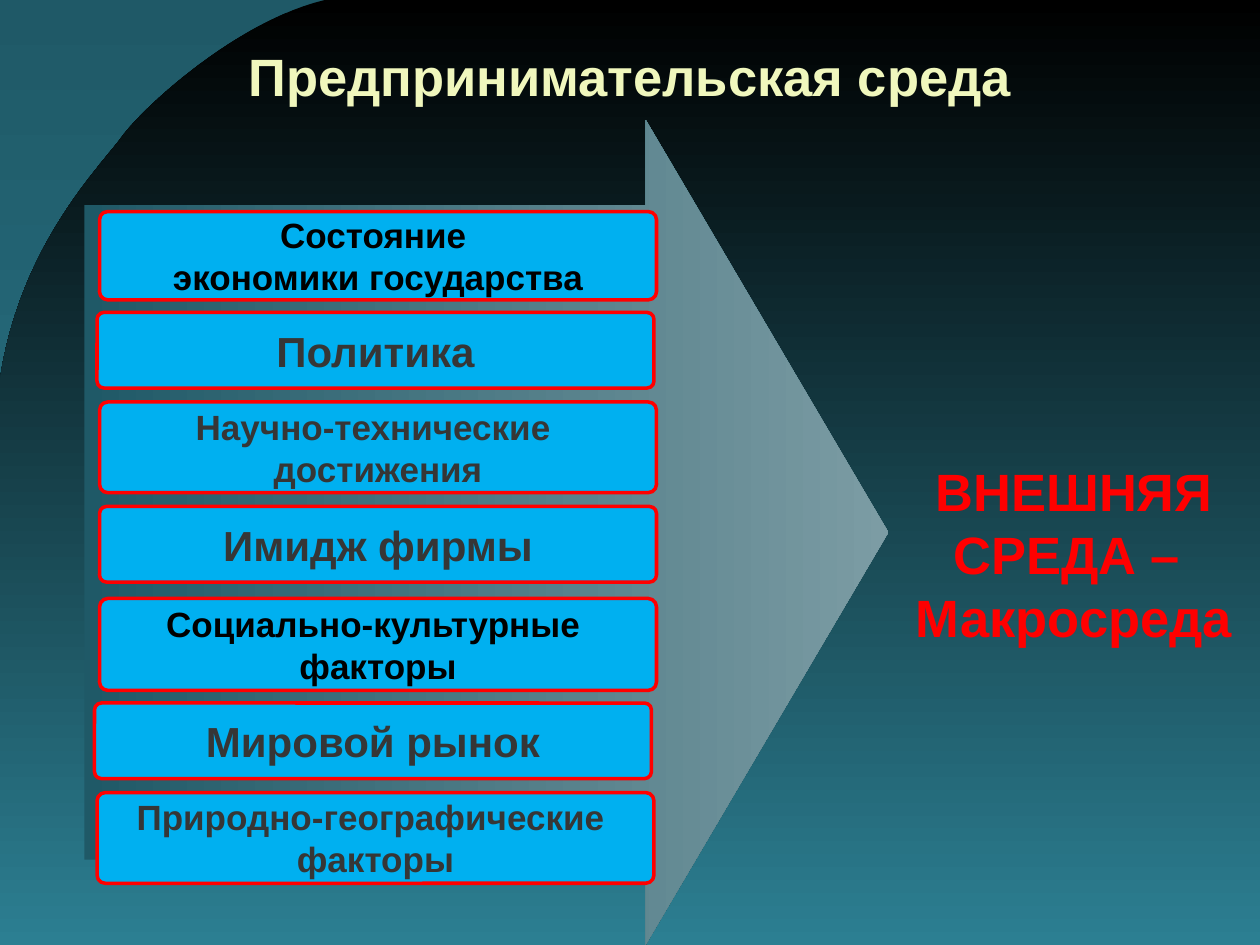
from lxml.etree import SubElement, fromstring
from pptx import Presentation
from pptx.dml.color import RGBColor
from pptx.enum.shapes import MSO_SHAPE as Kind
from pptx.enum.text import MSO_ANCHOR as Anchor, PP_ALIGN as Align
from pptx.oxml.ns import nsdecls, qn
from pptx.util import Inches, Pt

BLACK = RGBColor(0x00, 0x00, 0x00)
GRAY = RGBColor(0x36, 0x36, 0x36)
RED = RGBColor(0xFF, 0x00, 0x00)
BLUE = RGBColor(0x00, 0xB0, 0xF0)
CREAM = RGBColor(0xF0, 0xF7, 0xBD)
DEEP = RGBColor(0x1F, 0x59, 0x67)
TEAL = RGBColor(0x2C, 0x7F, 0x92)
MIST = RGBColor(0x7C, 0x9C, 0xA4)

FACTORS = [
    (0.79, 1.68, 0.70, 20, BLACK, ["Состояние ", "экономики государства"]),
    (0.77, 2.48, 0.60, 24, GRAY, ["Политика"]),
    (0.79, 3.19, 0.72, 20, GRAY, ["Научно-технические ", "достижения"]),
    (0.79, 4.02, 0.60, 24, GRAY, ["Имидж фирмы"]),
    (0.79, 4.75, 0.73, 20, BLACK, ["Социально-культурные ", "факторы"]),
    (0.75, 5.58, 0.60, 24, GRAY, ["Мировой рынок"]),
    (0.77, 6.29, 0.72, 20, GRAY, ["Природно-географические ", "факторы"]),
]
CURVES = [
    [(2.58, 0), (1.9, 0.16), (1.16, 0.83), (0.98, 1.07)],
    [(0.98, 1.07), (0.8, 1.32), (0.16, 1.94), (0, 3.01)],
]


def bend(a, b, c, d, steps=24):
    for i in range(1, steps + 1):
        t = i / steps
        u = 1 - t
        yield tuple(u**3 * p + 3 * u * u * t * q + 3 * u * t * t * r + t**3 * s
                    for p, q, r, s in zip(a, b, c, d))


class Deck:
    font = "Arial"

    def __init__(self, slide):
        self.slide = slide
        self.shapes = slide.shapes

    def blend(self, fill, first, last, angle):
        fill.gradient()
        fill.gradient_angle = angle
        for stop, color in zip(fill.gradient_stops, (first, last)):
            stop.color.rgb = color

    def sweep(self, curves):
        points = [p for curve in curves for p in bend(*curve)]
        points += [(0, 7.5), (10, 7.5), (10, 0)]
        left, top = curves[0][0]
        pen = self.shapes.build_freeform(Inches(left), Inches(top))
        pen.add_line_segments([(Inches(x), Inches(y)) for x, y in points], close=True)
        shape = pen.convert_to_shape()
        shape.shadow.inherit = False
        shape.line.fill.background()
        self.blend(shape.fill, BLACK, TEAL, 270)

    def box(self, kind, place, adjust):
        shape = self.shapes.add_shape(kind, *map(Inches, place))
        shape.shadow.inherit = False
        shape.line.fill.background()
        for i, value in enumerate(adjust):
            shape.adjustments[i] = value
        return shape

    def arrow(self, place):
        shape = self.box(Kind.RIGHT_ARROW, place, [0.793, 0.302])
        self.blend(shape.fill, DEEP, MIST, 0)

    def card(self, place, lines, size, color):
        shape = self.box(Kind.ROUNDED_RECTANGLE, place, [0.091])
        shape.fill.solid()
        shape.fill.fore_color.rgb = BLUE
        shape.line.color.rgb = RED
        shape.line.width = Pt(2)
        self.words(shape, lines, size, color, False)

    def label(self, place, lines, size, color):
        shape = self.shapes.add_textbox(*map(Inches, place))
        return self.words(shape, lines, size, color, True)

    def title(self, place, text):
        for run in self.label(place, [text], 30, CREAM):
            glow = fromstring(f'<a:effectLst {nsdecls("a")}/>')
            shade = SubElement(glow, qn("a:outerShdw"), dist="38100", dir="2700000")
            SubElement(shade, qn("a:srgbClr"), val="000000")
            run.font._element.find(qn("a:solidFill")).addnext(glow)

    def words(self, shape, lines, size, color, wrap):
        frame = shape.text_frame
        frame.word_wrap = wrap
        frame.vertical_anchor = Anchor.MIDDLE
        runs = []
        for i, line in enumerate(lines):
            para = frame.add_paragraph() if i else frame.paragraphs[0]
            para.alignment = Align.CENTER
            run = para.add_run()
            run.text = line
            run.font.name = self.font
            run.font.size = Pt(size)
            run.font.bold = True
            run.font.color.rgb = color
            runs.append(run)
        return runs


def main():
    show = Presentation()
    show.slide_width, show.slide_height = Inches(10), Inches(7.5)
    deck = Deck(show.slides.add_slide(show.slide_layouts[6]))
    deck.blend(deck.slide.background.fill, DEEP, TEAL, 270)
    deck.sweep(CURVES)
    deck.arrow((0.67, 0.95, 6.38, 6.55))
    for left, top, height, size, color, lines in FACTORS:
        deck.card((left, top, 4.42, height), lines, size, color)
    deck.label((6.89, 3.2, 3.27, 2.39), ["ВНЕШНЯЯ", "СРЕДА – ", "Макросреда"], 30, RED)
    deck.title((0.5, 0.25, 9, 0.7), "Предпринимательская среда")
    show.save("out.pptx")


if __name__ == "__main__":
    main()
